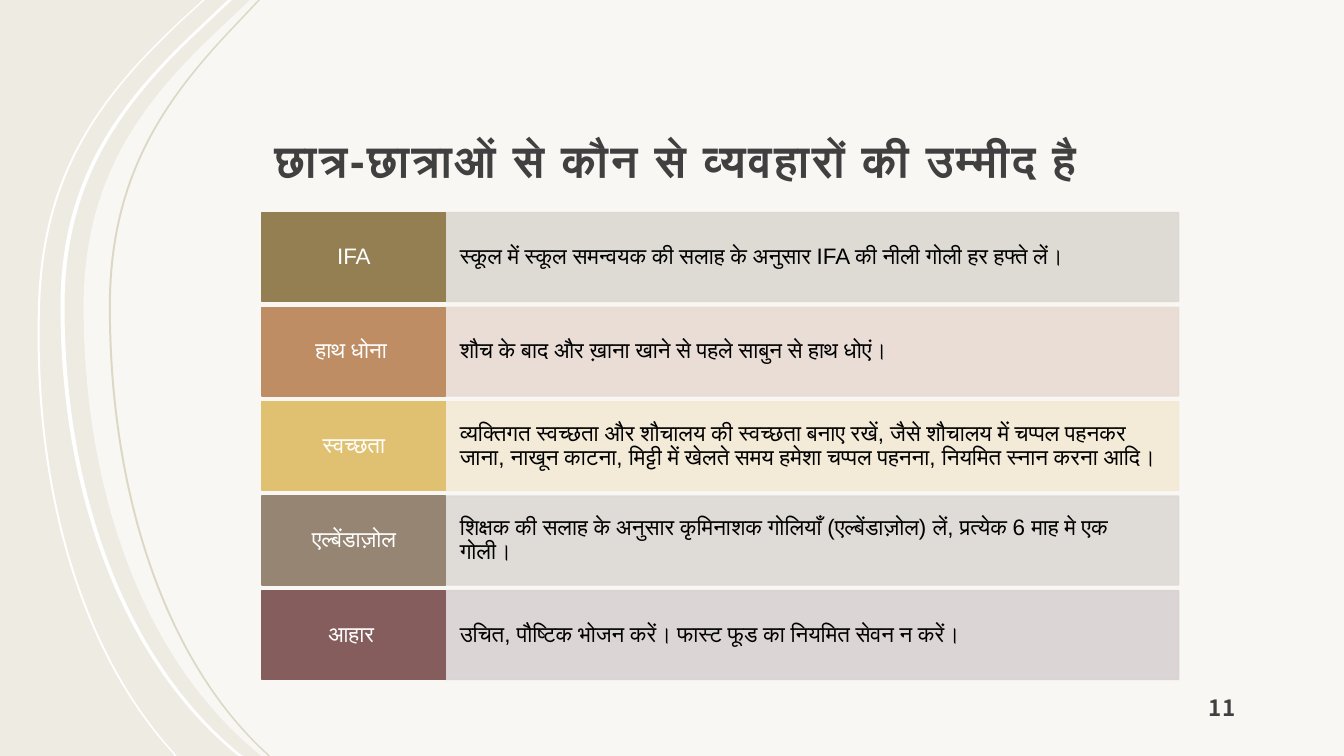
from lxml.etree import SubElement
from pptx import Presentation
from pptx.dml.color import RGBColor
from pptx.enum.shapes import MSO_SHAPE
from pptx.enum.text import MSO_ANCHOR, PP_ALIGN
from pptx.oxml.ns import qn
from pptx.util import Inches, Pt

COLORS = {
    "background": "EEEBE2",
    "white": "FFFFFF",
    "olive_line": "DDD7C5",
    "heading": "404040",
    "body": "000000",
}

BEHAVIOURS = [
    ("IFA", "स्कूल में स्कूल समन्वयक की सलाह के अनुसार IFA की नीली गोली हर हफ्ते लें।",
     "947F53", "DCD8D1"),
    ("हाथ धोना ", "शौच के बाद और ख़ाना खाने से पहले साबुन से हाथ धोएं।",
     "BE8D64", "E8DBD3"),
    ("स्वच्छता", "व्यक्तिगत स्वच्छता और शौचालय की स्वच्छता बनाए रखें, जैसे शौचालय में चप्पल "
     "पहनकर जाना, नाखून काटना, मिट्टी में खेलते समय हमेशा चप्पल पहनना, नियमित स्नान करना आदि।",
     "E0C171", "F3E9D5"),
    ("एल्बेंडाज़ोल", "शिक्षक की सलाह के अनुसार कृमिनाशक गोलियाँ (एल्बेंडाज़ोल) लें, "
     "प्रत्येक 6 माह मे एक गोली।",
     "968572", "DDD9D5"),
    ("आहार ", "उचित, पौष्टिक भोजन करें। फास्ट फूड का नियमित सेवन न करें।",
     "855D5D", "D9D2D2"),
]

PANEL_EDGE = [(2.48, 0), (2.11, 0.35), (1.39, 1.04), (0.83, 1.79), (0.83, 3.04),
              (0.83, 4.92), (1.45, 6.57), (2.57, 7.48), (2.59, 7.5)]
BANDS = [
    ([(2.01, 0), (1.75, 0.24), (1.02, 0.93), (0.43, 1.68), (0.38, 2.97),
      (0.31, 4.8), (0.78, 6.45), (1.71, 7.47), (1.73, 7.5)], 0.02, "white"),
    ([(2.26, 0), (1.89, 0.35), (1.17, 1.04), (0.6, 1.79), (0.6, 3.04),
      (0.6, 4.92), (1.23, 6.57), (2.34, 7.48), (2.37, 7.5)], 0.04, "white"),
    ([(2.56, 0), (2.23, 0.35), (1.59, 1.04), (1.08, 1.79), (1.08, 3.04),
      (1.08, 4.92), (1.64, 6.57), (2.64, 7.48), (2.66, 7.5)], 0.02, "olive_line"),
]
LEFT_CURVES = (2, 5)
RIGHT_CURVES = (11, 14)


def paint(fill, color, opacity=100):
    fill.solid()
    fill.fore_color.rgb = RGBColor.from_string(color)
    if opacity < 100:
        for srgb in fill._xPr.iter(qn("a:srgbClr")):
            SubElement(srgb, qn("a:alpha")).set("val", str(opacity * 1000))


def bend(outline, curve_starts):
    segments = [None, *outline._element.iter(qn("a:lnTo"))]
    for start in curve_starts:
        trio = segments[start:start + 3]
        parent = trio[0].getparent()
        curve = SubElement(parent, qn("a:cubicBezTo"))
        trio[0].addprevious(curve)
        for segment in trio:
            curve.append(segment[0])
            parent.remove(segment)


def add_outline(slide, points, curve_starts, color, opacity=100):
    corners = [(Inches(x), Inches(y)) for x, y in points]
    builder = slide.shapes.build_freeform(*corners[0], scale=1.0)
    builder.add_line_segments(corners[1:], close=True)
    outline = builder.convert_to_shape()
    bend(outline, curve_starts)
    outline.shadow.inherit = False
    paint(outline.fill, color, opacity)
    outline.line.fill.background()


def write(shape, text, size, color, insets, font="Arial", bold=False,
          anchor=MSO_ANCHOR.MIDDLE, align=PP_ALIGN.LEFT, line_spacing=None,
          tracking=None, scripts=()):
    frame = shape.text_frame
    frame.word_wrap = True
    frame.vertical_anchor = anchor
    (frame.margin_left, frame.margin_top,
     frame.margin_right, frame.margin_bottom) = map(Inches, insets)
    paragraph = frame.paragraphs[0]
    paragraph.text = text
    paragraph.alignment = align
    paragraph.line_spacing = line_spacing
    run = paragraph.runs[0]
    run.font.size = Pt(size)
    run.font.bold = bold
    run.font.name = font
    run.font.color.rgb = RGBColor.from_string(color)
    properties = run.font._element
    for script in scripts:
        SubElement(properties, qn(script)).set("typeface", font)
    if tracking:
        properties.set("spc", str(tracking))


def add_backdrop(slide, width, height):
    paint(slide.background.fill, COLORS["background"])
    panel = [*PANEL_EDGE, (width, height), (width, 0)]
    add_outline(slide, panel, LEFT_CURVES, COLORS["white"], 60)
    for edge, thickness, color in BANDS:
        right_side = [(x + thickness, y) for x, y in reversed(edge)]
        add_outline(slide, edge + right_side, LEFT_CURVES + RIGHT_CURVES, COLORS[color])


def add_heading(slide, left, top, width, height):
    heading = slide.shapes.add_textbox(*map(Inches, (left, top, width, height)))
    write(heading, "छात्र-छात्राओं से कौन से व्यवहारों की उम्मीद है", 32, COLORS["heading"],
          (0.12, 0.12, 0.12, 0.1), bold=True, anchor=MSO_ANCHOR.BOTTOM,
          line_spacing=1.3, tracking=150, scripts=("a:cs",))


def add_page_number(slide, left, top, width, height):
    page_number = slide.shapes.add_textbox(*map(Inches, (left, top, width, height)))
    write(page_number, "11", 16, COLORS["heading"], (0.12, 0.12, 0.12, 0.1),
          font="Noto Sans CJK JP", bold=True, anchor=MSO_ANCHOR.BOTTOM,
          scripts=("a:ea",))


def add_block(slide, box, color, opacity=100):
    block = slide.shapes.add_shape(MSO_SHAPE.RECTANGLE, *map(Inches, box))
    block.shadow.inherit = False
    paint(block.fill, color, opacity)
    paint(block.line.fill, color, opacity)
    block.line.width = Pt(1)
    return block


def add_behaviours(slide, left, top, width, height):
    row_height = 0.88
    label_width = 1.82
    pitch = (height - row_height) / (len(BEHAVIOURS) - 1)
    for index, (topic, advice, strong, pale) in enumerate(BEHAVIOURS):
        y = top + index * pitch
        advice_block = add_block(
            slide, (left + label_width, y, width - label_width, row_height), pale, 90)
        write(advice_block, advice, 16, COLORS["body"], (0.14, 0.22, 0.14, 0.22),
              line_spacing=0.9)
        topic_block = add_block(slide, (left, y, label_width, row_height), strong)
        write(topic_block, topic, 16, COLORS["white"], (0.1, 0.09, 0.1, 0.09),
              align=PP_ALIGN.CENTER, line_spacing=0.9)


def main():
    presentation = Presentation()
    presentation.slide_width = Inches(13.33)
    presentation.slide_height = Inches(7.5)
    slide = presentation.slides.add_slide(presentation.slide_layouts[6])
    add_backdrop(slide, 13.33, 7.5)
    add_heading(slide, 2.6, 0.48, 9.18, 1.47)
    add_page_number(slide, 11.87, 6.75, 1.3, 0.5)
    add_behaviours(slide, 2.6, 2.11, 9.09, 4.63)
    presentation.save("out.pptx")


if __name__ == "__main__":
    main()
